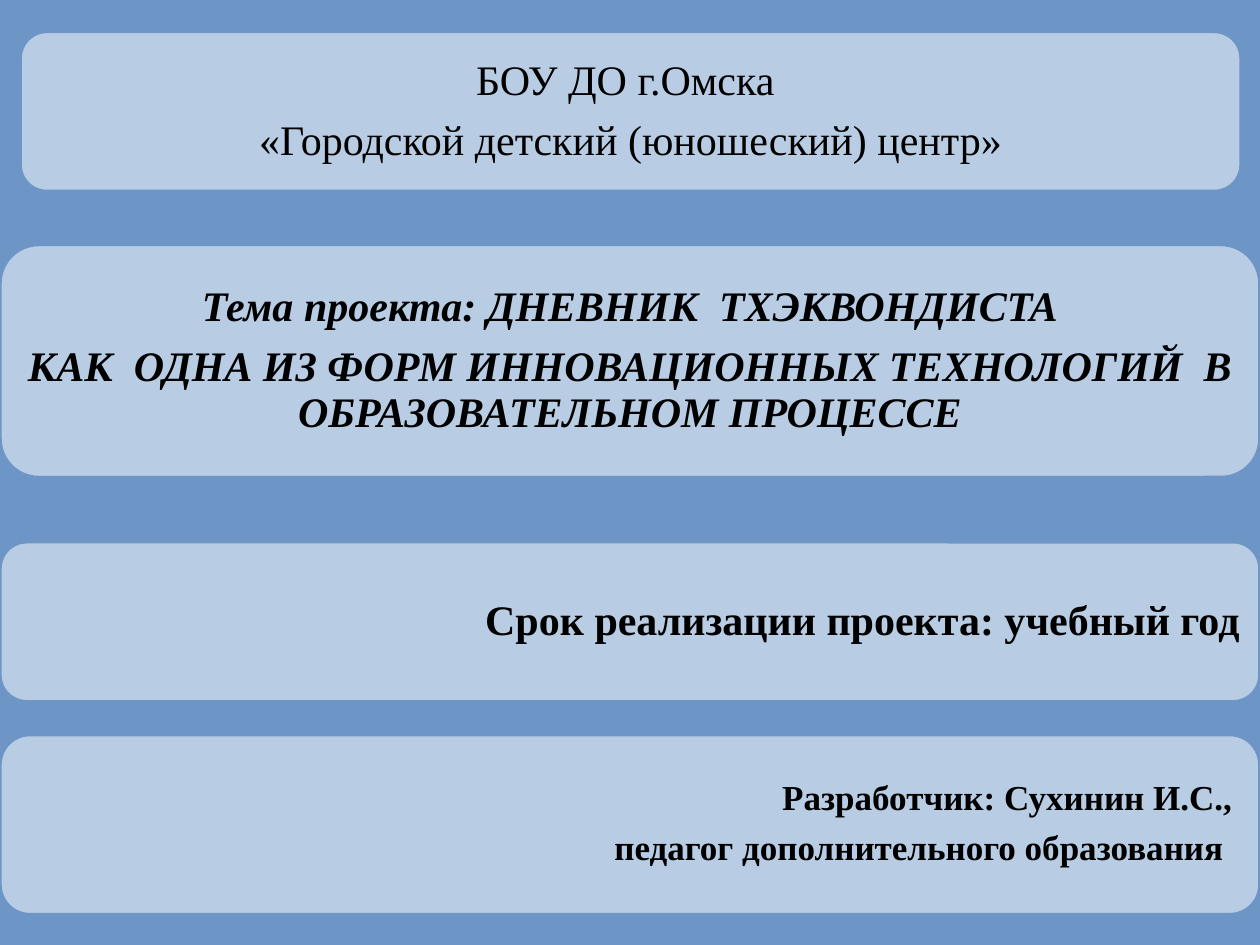
import pptx
import pptx.util
import pptx.dml.color
import pptx.enum.shapes
import pptx.enum.text

Inches, Pt = pptx.util.Inches, pptx.util.Pt
Align = pptx.enum.text.PP_ALIGN
COLORS = {"back": "6D96C7", "panel": "B8CCE4", "text": "000000"}
FONT = "Times New Roman"
PANELS = [
    {"at": (0.16, 0.25, 9.69, 1.27),
     "lines": ["БОУ ДО г.Омска ", "«Городской детский (юношеский) центр»"],
     "style": {}},
    {"at": (0, 1.94, 10, 1.85), "title": True,
     "lines": ["Тема проекта: ДНЕВНИК  ТХЭКВОНДИСТА",
               "КАК  ОДНА ИЗ ФОРМ ИННОВАЦИОННЫХ ТЕХНОЛОГИЙ  В ОБРАЗОВАТЕЛЬНОМ ПРОЦЕССЕ"],
     "style": {"bold": True, "italic": True}},
    {"at": (0, 4.3, 10, 1.27),
     "lines": ["Срок реализации проекта: учебный год"],
     "style": {"bold": True, "align": Align.RIGHT}},
    {"at": (0, 5.83, 10, 1.43),
     "lines": ["Разработчик: Сухинин И.С., ", "педагог дополнительного образования  "],
     "style": {"size": 20, "bold": True, "align": Align.RIGHT, "inset": 0.08}},
]


def color(name):
    return pptx.dml.color.RGBColor.from_string(COLORS[name])


def write(shape, lines, size=24, bold=False, italic=False, align=Align.CENTER, inset=0.1):
    frame = shape.text_frame
    frame.word_wrap = True
    frame.auto_size = pptx.enum.text.MSO_AUTO_SIZE.NONE
    frame.vertical_anchor = pptx.enum.text.MSO_ANCHOR.MIDDLE
    frame.margin_left = frame.margin_right = Inches(inset)
    frame.margin_top = frame.margin_bottom = Inches(inset)
    frame.text = "\n".join(lines)
    for para in frame.paragraphs:
        para.alignment = align
        para.line_spacing = 0.9
        para.space_before = Pt(0)
        para.space_after = Pt(size * 0.35)
        font = para.runs[0].font
        font.name, font.size = FONT, Pt(size)
        font.bold, font.italic = bold, italic
        font.color.rgb = color("text")


def panel(slide, box):
    kind = pptx.enum.shapes.MSO_SHAPE.ROUNDED_RECTANGLE
    shape = slide.shapes.add_shape(kind, *map(Inches, box))
    shape.shadow.inherit = False
    shape.fill.solid()
    shape.fill.fore_color.rgb = color("panel")
    shape.line.color.rgb = color("back")
    shape.line.width = Pt(2)
    return shape


def head(slide, shape, pad=0.09):
    title = slide.shapes.title
    gap = Inches(pad)
    title.left, title.top = shape.left + gap, shape.top + gap
    title.width, title.height = shape.width - 2 * gap, shape.height - 2 * gap
    shape._element.addnext(title._element)
    return title


def main():
    """Build the project title slide."""
    deck = pptx.Presentation()
    deck.slide_width, deck.slide_height = Inches(10), Inches(7.5)
    slide = deck.slides.add_slide(deck.slide_layouts[5])
    slide.background.fill.solid()
    slide.background.fill.fore_color.rgb = color("back")
    for item in PANELS:
        shape = panel(slide, item["at"])
        if item.get("title"):
            shape = head(slide, shape)
        write(shape, item["lines"], **item["style"])
    deck.save("out.pptx")


if __name__ == "__main__":
    main()
